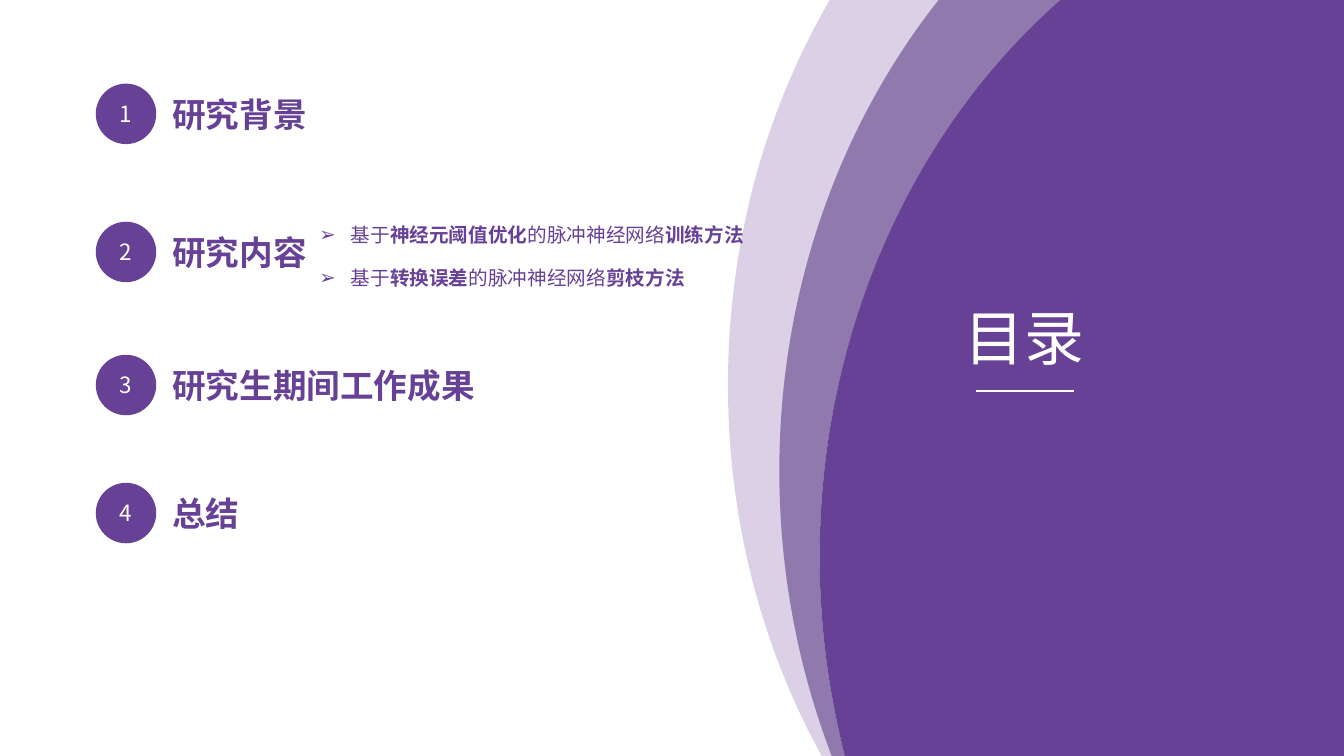
"""Build the purple contents slide with curved bands and four numbered topics."""
from lxml import etree
from pptx import Presentation
from pptx.dml.color import RGBColor
from pptx.enum.shapes import MSO_CONNECTOR, MSO_SHAPE
from pptx.enum.text import MSO_ANCHOR, MSO_AUTO_SIZE, PP_ALIGN
from pptx.oxml.ns import qn
from pptx.util import Inches, Pt

STRAIGHT = MSO_CONNECTOR.STRAIGHT
OVAL = MSO_SHAPE.OVAL
MIDDLE = MSO_ANCHOR.MIDDLE
GROW = MSO_AUTO_SIZE.SHAPE_TO_FIT_TEXT
LEFT, CENTER, JUSTIFY = PP_ALIGN.LEFT, PP_ALIGN.CENTER, PP_ALIGN.JUSTIFY

PURPLE, WHITE = "674196", "FFFFFF"
CJK_FONT = "Noto Sans CJK SC"
WIDTH, HEIGHT = 13.33, 7.5


def color(hex_string):
    """Return the colour for a hex string."""
    return RGBColor.from_string(hex_string)


def write_run(paragraph, text, hex_string, format_values):
    """Add a run in the given colour and format."""
    run = paragraph.add_run()
    run.text = text
    for name, value in format_values.items():
        setattr(run.font, name, value)
    run.font.color.rgb = color(hex_string)
    etree.SubElement(run._r.get_or_add_rPr(), qn("a:ea"), typeface=CJK_FONT)


presentation = Presentation()
presentation.slide_width = Inches(WIDTH)
presentation.slide_height = Inches(HEIGHT)
slide = presentation.slides.add_slide(presentation.slide_layouts[6])
slide.background.fill.solid()
slide.background.fill.fore_color.rgb = color(WHITE)

top_right, bottom_right = (WIDTH, 0), (WIDTH, HEIGHT)
bands = [
    ("DBD0E6", bottom_right, [
        [top_right] * 3,
        [(8.23, 0)] * 3,
        [(7.59, 1.1), (7.22, 2.41), (7.22, 3.82)],
        [(7.22, 5.17), (7.56, 6.43), (8.15, HEIGHT)],
        [bottom_right] * 3,
    ]),
    ("9079AD", (10.53, 0), [
        [(9.31, 0)] * 3,
        [(8.33, 1.24), (7.73, 2.88), (7.73, 4.67)],
        [(7.73, 5.68), (7.92, 6.64), (8.25, HEIGHT)],
        [bottom_right] * 3,
        [(8.38, HEIGHT)] * 3,
        [(8.22, 6.87), (8.13, 6.21), (8.13, 5.53)],
        [(8.13, 3.28), (9.07, 1.27), (10.53, 0)],
    ]),
    (PURPLE, top_right, [
        [(10.52, 0)] * 3,
        [(9.07, 1.27), (8.13, 3.28), (8.13, 5.53)],
        [(8.13, 6.21), (8.22, 6.87), (8.38, HEIGHT)],
        [bottom_right] * 3,
        [top_right] * 3,
    ]),
]
for fill, start, curves in bands:
    builder = slide.shapes.build_freeform(*map(Inches, start))
    builder.add_line_segments(
        [tuple(map(Inches, point)) for curve in curves for point in curve], close=True)
    band = builder.convert_to_shape()
    band.shadow.inherit = False
    band.fill.solid()
    band.fill.fore_color.rgb = color(fill)
    band.line.fill.background()
    segments = list(band._element.iter(qn("a:lnTo")))
    for first in range(0, len(segments), 3):
        bezier = etree.Element(qn("a:cubicBezTo"))
        segments[first].addprevious(bezier)
        for segment in segments[first:first + 3]:
            bezier.append(segment[0])
            segment.getparent().remove(segment)

underline = slide.shapes.add_connector(
    STRAIGHT, Inches(9.68), Inches(3.88), Inches(10.65), Inches(3.88))
underline.line.color.rgb = color(WHITE)
underline.line.width = Pt(1.5)
etree.SubElement(underline._element.spPr, qn("a:effectLst"))

title_format = {"size": Pt(42.7), "name": "Arial"}
heading_format = {"size": Pt(24), "name": CJK_FONT, "bold": True}
number_format = {"size": Pt(16), "name": CJK_FONT}
topics = [("研究背景", 0.83, 1.55), ("研究内容", 2.2, 1.55),
          ("研究生期间工作成果", 3.52, 3.23), ("总结", 4.79, 0.88)]
subtopics = [
    (2.06, 4.44, ["基于", "神经元阈值优化", "的脉冲神经网络", "训练方法"]),
    (2.49, 3.86, ["基于", "转换误差", "的脉冲神经网络", "剪枝方法"]),
]

text_boxes = [((9.47, 2.93, 1.4, 0.82), [("目录", WHITE, title_format)], JUSTIFY, False)]
for topic, top, width in topics:
    place = (1.61, top + 0.05, width, 0.5)
    text_boxes.append((place, [(topic, PURPLE, heading_format)], LEFT, False))
for top, width, parts in subtopics:
    runs = [(part, PURPLE, {"size": Pt(14), "name": "Arial", "bold": index % 2 == 1})
            for index, part in enumerate(parts)]
    text_boxes.append(((3.07, top, width, 0.4), runs, LEFT, True))

for place, runs, alignment, bulleted in text_boxes:
    box = slide.shapes.add_textbox(*map(Inches, place))
    box.text_frame.word_wrap = False
    box.text_frame.auto_size = GROW
    paragraph = box.text_frame.paragraphs[0]
    paragraph.alignment = alignment
    if bulleted:
        paragraph.line_spacing = Pt(24)
        properties = paragraph._p.get_or_add_pPr()
        properties.set("marL", str(Inches(0.31)))
        properties.set("indent", str(Inches(-0.31)))
        etree.SubElement(properties, qn("a:buFont"), typeface="Arial")
        etree.SubElement(properties, qn("a:buChar"), char="➢")
    for run in runs:
        write_run(paragraph, *run)

for number, (topic, top, width) in enumerate(topics, 1):
    circle = slide.shapes.add_shape(OVAL, Inches(0.95), Inches(top), Inches(0.6), Inches(0.6))
    circle.shadow.inherit = False
    circle.fill.solid()
    circle.fill.fore_color.rgb = color(PURPLE)
    circle.line.fill.background()
    circle.text_frame.vertical_anchor = MIDDLE
    paragraph = circle.text_frame.paragraphs[0]
    paragraph.alignment = CENTER
    write_run(paragraph, str(number), WHITE, number_format)

presentation.save("out.pptx")
